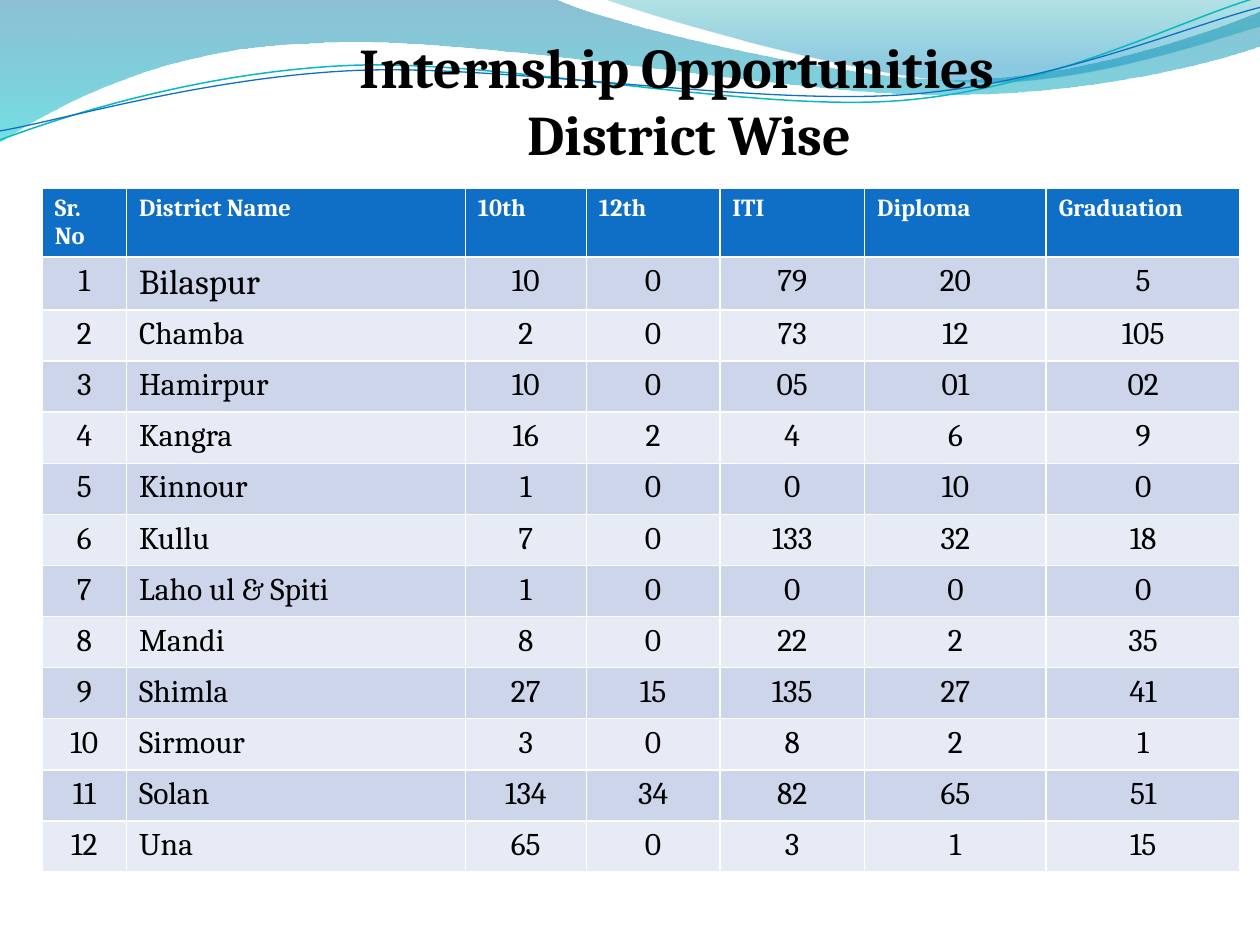
import math

import pptx
import pptx.util
import pptx.dml.color
import pptx.enum.text
import pptx.oxml.ns
from lxml import etree
from pptx.util import Cm

COLORS = {
    "black": "000000", "white": "FFFFFF", "header": "0F6FC6",
    "odd": "CCD5EA", "even": "E7EBF5", "teal": "0AB8BF",
    "wave_top": "0074A1", "wave_bottom": "00C6CF",
    "crest_top": "00A1A9", "crest_bottom": "008BBF",
}
FONT = "Cambria"
TILT = -2.7
COL_WIDTHS = [1.7, 6.83, 2.44, 2.69, 2.92, 3.66, 3.91]
ROW_HEIGHT = 1.03
HEADERS = ["Sr. No", "District Name", "10th", "12th", "ITI", "Diploma", "Graduation"]
DISTRICTS = [
    ("Bilaspur", "10", "0", "79", "20", "5"),
    ("Chamba", "2", "0", "73", "12", "105"),
    ("Hamirpur", "10", "0", "05", "01", "02"),
    ("Kangra", "16", "2", "4", "6", "9"),
    ("Kinnour", "1", "0", "0", "10", "0"),
    ("Kullu", "7", "0", "133", "32", "18"),
    ("Laho ul & Spiti", "1", "0", "0", "0", "0"),
    ("Mandi", "8", "0", "22", "2", "35"),
    ("Shimla", "27", "15", "135", "27", "41"),
    ("Sirmour", "3", "0", "8", "2", "1"),
    ("Solan", "134", "34", "82", "65", "51"),
    ("Una", "65", "0", "3", "1", "15"),
]
WAVE = [[(0, 0)], [(11.18, -0.03)],
        [(12.09, 0.43), (16.87, 1.6), (19.25, 1.6)],
        [(21.67, 1.6), (24.33, 0.66), (25.4, 0.23)],
        [(25.43, 0.91)],
        [(24.97, 1.12), (22.1, 1.93), (18.95, 1.91)],
        [(15.8, 1.91), (9.7, 0.71), (6.53, 0.86)],
        [(3.28, 0.91), (1.17, 2.11), (-0.03, 2.87)]]
CREST = [[(12.17, -0.03)],
         [(12.93, 0.28), (17.32, 1.57), (19.53, 1.65)],
         [(21.74, 1.75), (24.41, 0.81), (25.4, 0.53)],
         [(25.4, 0)]]
TEAL_LINE = [[(0, 2.82)],
             [(1.22, 2.36), (4.01, 1.45), (7.04, 1.32)],
             [(10.03, 1.19), (15.06, 2.26), (18.11, 2.03)],
             [(21.16, 1.8), (23.83, 0.38), (25.35, -0.05)]]
BLUE_LINE = [[(0, 2.64)],
             [(1.19, 2.44), (4.17, 1.55), (7.19, 1.42)],
             [(10.24, 1.3), (15.16, 2.13), (18.21, 1.91)],
             [(21.23, 1.7), (23.9, 0.53), (25.4, 0.15)]]


def rgb(name):
    """Return the named colour."""
    return pptx.dml.color.RGBColor.from_string(COLORS[name])


def rotate(path, center, degrees):
    """Turn every point of the path about the center."""
    cos, sin = math.cos(math.radians(degrees)), math.sin(math.radians(degrees))
    cx, cy = center
    return [[(cx + (x - cx) * cos - (y - cy) * sin, cy + (x - cx) * sin + (y - cy) * cos)
             for x, y in seg] for seg in path]


def add_curve(s, path, close):
    """Add a freeform of straight and cubic segments without shadow."""
    ends = [(Cm(seg[-1][0]), Cm(seg[-1][1])) for seg in path]
    fb = s.shapes.build_freeform(*ends[0])
    fb.add_line_segments(ends[1:], close=close)
    sp = fb.convert_to_shape()
    sp.shadow.inherit = False
    qn = pptx.oxml.ns.qn
    for el, seg in zip(list(sp.element.iter(qn("a:lnTo"))), path[1:]):
        if len(seg) == 3:
            curve = etree.Element(qn("a:cubicBezTo"))
            for x, y in seg:
                etree.SubElement(curve, qn("a:pt"), x=str(Cm(x) - sp.left),
                                 y=str(Cm(y) - sp.top))
            el.getparent().replace(el, curve)
    return sp


def add_wave(s, path, stops):
    """Add a translucent wave; stops are (position, colour, opacity percent)."""
    sp = add_curve(s, path, True)
    sp.line.fill.background()
    sp.fill.gradient()
    sp.fill.gradient_angle = 270
    for stop, (position, color, _) in zip(sp.fill.gradient_stops, stops):
        stop.position = position
        stop.color.rgb = rgb(color)
    qn = pptx.oxml.ns.qn
    for el, (_, _, opacity) in zip(sp.element.iter(qn("a:srgbClr")), stops):
        etree.SubElement(el, qn("a:alpha"), val=str(opacity * 1000))


def add_wavy_line(s, path, center, color, width):
    """Add an open curved line, tilted about its center."""
    sp = add_curve(s, rotate(path, center, -TILT), False)
    sp.rotation = TILT
    sp.fill.background()
    sp.line.color.rgb = rgb(color)
    sp.line.width = pptx.util.Pt(width)


def add_run(p, text, size, color, bold=False):
    """Add one formatted run."""
    r = p.add_run()
    r.text = text
    r.font.name = FONT
    r.font.size = pptx.util.Pt(size)
    r.font.bold = bold
    r.font.color.rgb = rgb(color)


def fill_cell(cell, text, size, color, fill, bold=False, center=False):
    """Write and colour one table cell."""
    cell.fill.solid()
    cell.fill.fore_color.rgb = rgb(fill)
    p = cell.text_frame.paragraphs[0]
    if center:
        p.alignment = pptx.enum.text.PP_ALIGN.CENTER
    add_run(p, text, size, color, bold)


def add_district_table(s):
    """Add the table of openings by district."""
    rows = len(DISTRICTS) + 1
    table = s.shapes.add_table(rows, len(HEADERS), Cm(0.85), Cm(3.79),
                               Cm(sum(COL_WIDTHS)), Cm(rows * ROW_HEIGHT)).table
    for col, width in zip(table.columns, COL_WIDTHS):
        col.width = Cm(width)
    for row in table.rows:
        row.height = Cm(ROW_HEIGHT)
    for c, text in enumerate(HEADERS):
        fill_cell(table.cell(0, c), text, 14, "white", "header", bold=True)
    for r, district in enumerate(DISTRICTS, 1):
        for c, text in enumerate((str(r),) + district):
            fill_cell(table.cell(r, c), text, 20 if (r, c) == (1, 1) else 18, "black",
                      "odd" if r % 2 else "even", center=c != 1)


def add_title(s, lines):
    """Place the title in front of the waves."""
    title = s.shapes.title
    title.left, title.top, title.width, title.height = Cm(4.93), Cm(0.53), Cm(17.7), Cm(3)
    tf = title.text_frame
    tf.word_wrap = True
    tf.auto_size = pptx.enum.text.MSO_AUTO_SIZE.SHAPE_TO_FIT_TEXT
    tf.vertical_anchor = pptx.enum.text.MSO_ANCHOR.TOP
    for i, line in enumerate(lines):
        p = tf.add_paragraph() if i else tf.paragraphs[0]
        p.alignment = pptx.enum.text.PP_ALIGN.CENTER
        add_run(p, line, 32, "black", True)
    title.element.getparent().append(title.element)


def main():
    """Build the slide."""
    prs = pptx.Presentation()
    prs.slide_width, prs.slide_height = Cm(25.4), Cm(19.05)
    s = prs.slides.add_slide(prs.slide_layouts[5])
    add_wave(s, WAVE, [(0, "wave_top", 45), (1, "wave_bottom", 55)])
    add_wave(s, CREST, [(0, "crest_top", 30), (0.8, "crest_bottom", 45)])
    add_wavy_line(s, TEAL_LINE, (12.68, 1.46), "teal", 0.85)
    add_wavy_line(s, BLUE_LINE, (12.69, 1.5), "header", 0.75)
    add_district_table(s)
    add_title(s, ["Internship Opportunities ", " District Wise"])
    prs.save("out.pptx")


if __name__ == "__main__":
    main()
